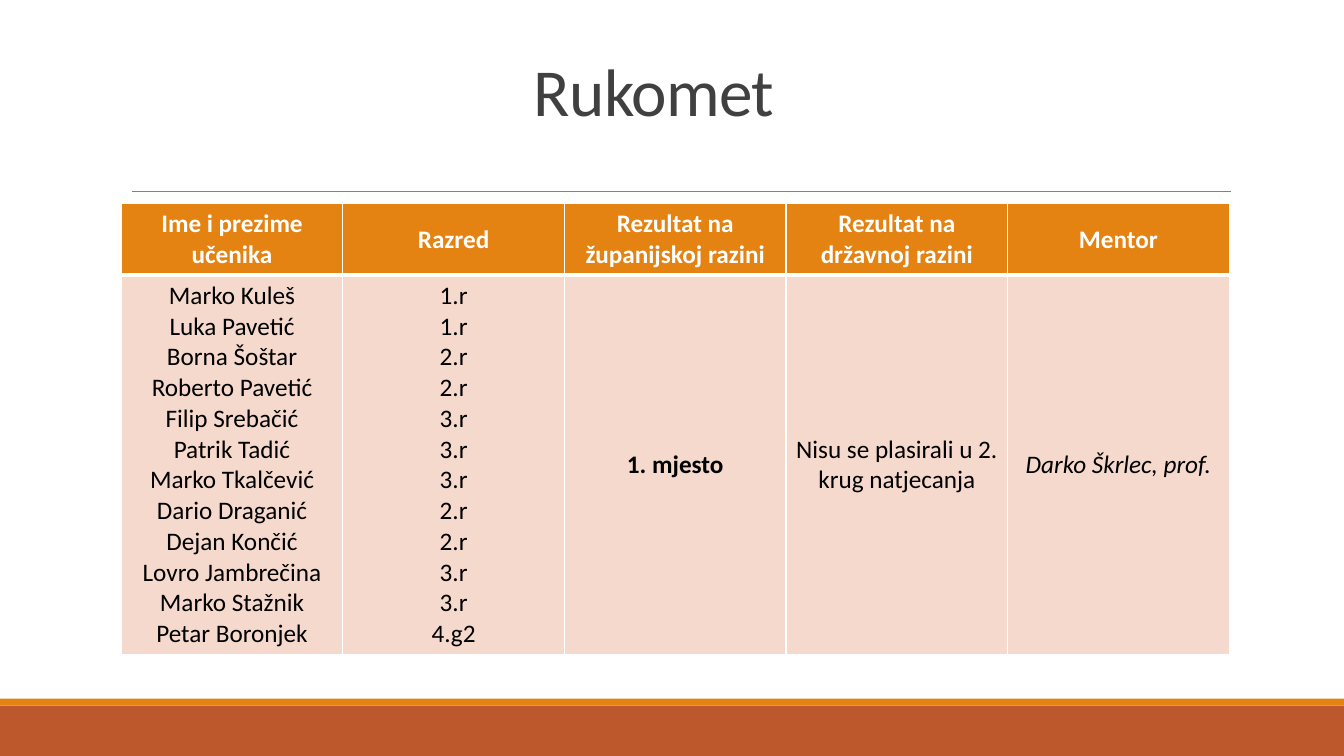
"""Build the handball results slide."""
from dataclasses import dataclass

from lxml.etree import SubElement
from pptx import Presentation
from pptx.dml.color import RGBColor
from pptx.enum.shapes import MSO_CONNECTOR, MSO_SHAPE
from pptx.enum.text import MSO_ANCHOR, PP_ALIGN
from pptx.oxml.ns import qn
from pptx.util import Pt


@dataclass(frozen=True)
class Theme:
    """Colours, font and type sizes of the slide."""
    font: str = "Calibri"
    title: str = "404040"
    rule: str = "808080"
    orange: str = "E48312"
    rust: str = "BD582C"
    pale: str = "F5D9CC"
    white: str = "FFFFFF"
    black: str = "000000"
    big: int = 48
    body: int = 18


THEME = Theme()
HEADS = ["Ime i prezime učenika", "Razred", "Rezultat na županijskoj razini",
         "Rezultat na državnoj razini", "Mentor"]
PUPILS = [("Marko Kuleš", "1.r"), ("Luka Pavetić", "1.r"),
          ("Borna Šoštar", "2.r"), ("Roberto Pavetić", "2.r"),
          ("Filip Srebačić", "3.r"), ("Patrik Tadić", "3.r"),
          ("Marko Tkalčević", "3.r"), ("Dario Draganić", "2.r"),
          ("Dejan Končić", "2.r"), ("Lovro Jambrečina", "3.r"),
          ("Marko Stažnik", "3.r"), ("Petar Boronjek", "4.g2")]
NAMES, GRADES = ("\n".join(part) for part in zip(*PUPILS))
RESULTS = [NAMES, GRADES, "1. mjesto",
           "Nisu se plasirali u 2. krug natjecanja", "Darko Škrlec, prof."]


def rgb(code):
    """Turn a hex code into a colour."""
    return RGBColor.from_string(code)


def style(frame, size, color, bold=False, italic=False):
    """Centre and format all the text of a frame."""
    for para in frame.paragraphs:
        para.alignment = PP_ALIGN.CENTER
        for run in para.runs:
            font = run.font
            font.name, font.size = THEME.font, Pt(size)
            font.bold, font.italic = bold, italic
            font.color.rgb = rgb(color)


def add_band(slide, top, height, color):
    """Draw a full-width band."""
    band = slide.shapes.add_shape(MSO_SHAPE.RECTANGLE, Pt(0), Pt(top),
                                  Pt(960), Pt(height))
    band.shadow.inherit = False
    band.fill.solid()
    band.fill.fore_color.rgb = rgb(color)
    band.line.fill.background()


def add_rule(slide, left, right, top):
    """Draw the thin line under the title."""
    rule = slide.shapes.add_connector(MSO_CONNECTOR.STRAIGHT, Pt(left),
                                      Pt(top), Pt(right), Pt(top))
    rule.line.color.rgb = rgb(THEME.rule)
    rule.line.width = Pt(0.5)
    SubElement(rule._element.spPr, qn("a:effectLst"))


def add_title(slide, text):
    """Write the slide title."""
    box = slide.shapes.add_textbox(Pt(71.3), Pt(26), Pt(792), Pt(70.5))
    frame = box.text_frame
    frame.word_wrap = True
    frame.vertical_anchor = MSO_ANCHOR.BOTTOM
    frame.text = text
    style(frame, THEME.big, THEME.title)
    para = frame.paragraphs[0]
    para.line_spacing = 0.85
    para.runs[0]._r.get_or_add_rPr().set("spc", "-50")


def add_edges(cell, top, bottom):
    """Give a cell white borders."""
    props = cell._tc.get_or_add_tcPr()
    for side, width in (("L", 1), ("R", 1), ("T", top), ("B", bottom)):
        edge = SubElement(props, qn(f"a:ln{side}"), w=str(Pt(width)))
        fill = SubElement(edge, qn("a:solidFill"))
        SubElement(fill, qn("a:srgbClr"), val=THEME.white)


def fill_cell(cell, text, back, color, edges, bold, italic=False):
    """Set the text, borders and fill of a cell."""
    add_edges(cell, *edges)
    cell.fill.solid()
    cell.fill.fore_color.rgb = rgb(back)
    cell.vertical_anchor = MSO_ANCHOR.MIDDLE
    cell.text_frame.text = text
    style(cell.text_frame, THEME.body, color, bold, italic)


def add_grid(slide):
    """Build the table of results."""
    heights = (51, 271)
    table = slide.shapes.add_table(2, len(HEADS), Pt(86.6), Pt(145.5),
                                   Pt(791.5), Pt(sum(heights))).table
    table.horz_banding = False
    for row, height in zip(table.rows, heights):
        row.height = Pt(height)
    for col, (head, result) in enumerate(zip(HEADS, RESULTS)):
        table.columns[col].width = Pt(158.3)
        fill_cell(table.cell(0, col), head, THEME.orange, THEME.white,
                  (1, 3), True)
        fill_cell(table.cell(1, col), result, THEME.pale, THEME.black,
                  (3, 1), col == 2, col == 4)


def main():
    """Build and save the slide."""
    deck = Presentation()
    deck.slide_width, deck.slide_height = Pt(960), Pt(540)
    slide = deck.slides.add_slide(deck.slide_layouts[6])
    add_band(slide, 504, 36, THEME.rust)
    add_band(slide, 499, 5, THEME.orange)
    add_rule(slide, 94, 879, 136.8)
    add_title(slide, "Rukomet")
    add_grid(slide)
    deck.save("out.pptx")


if __name__ == "__main__":
    main()
